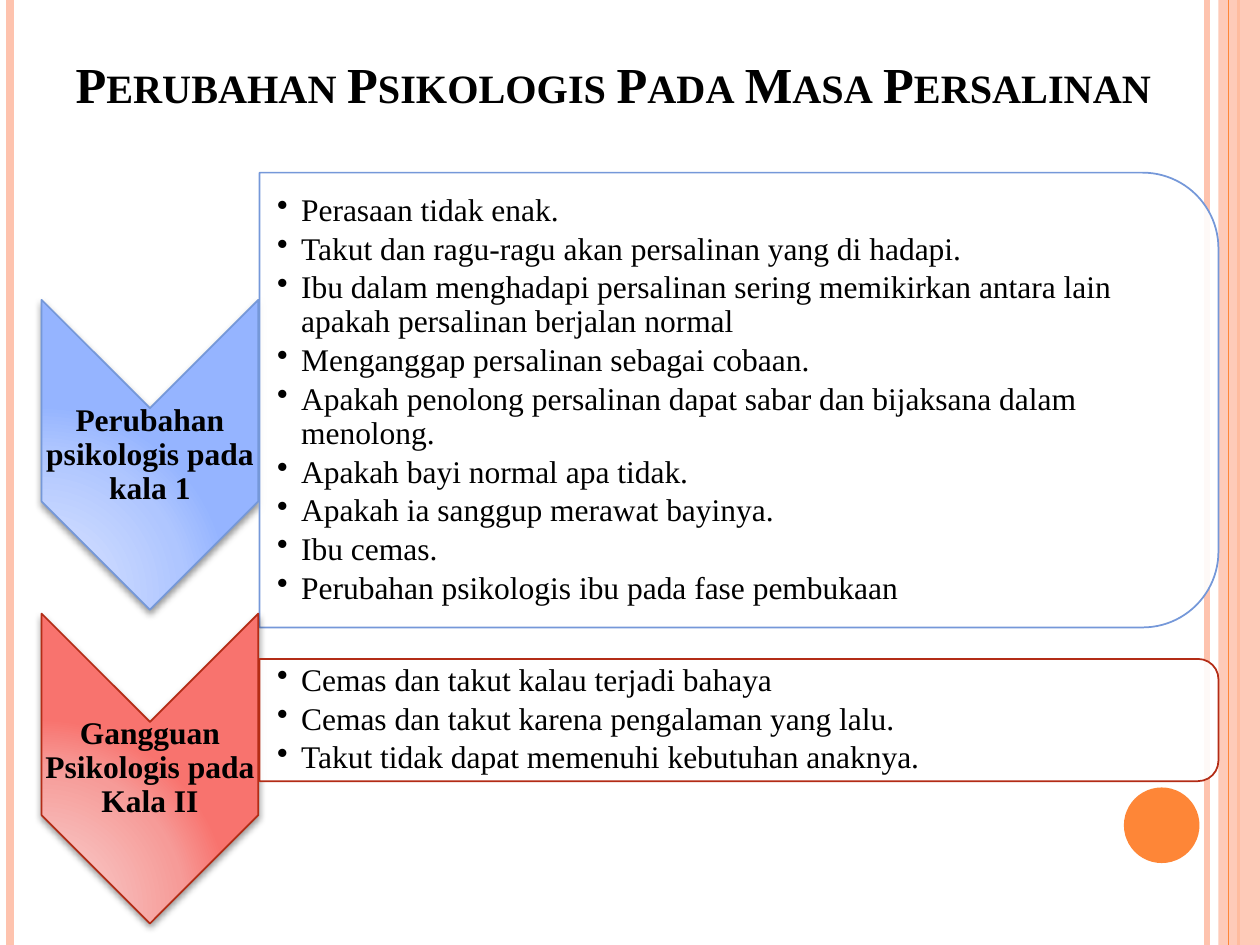
from lxml.etree import SubElement
from pptx import Presentation
from pptx.dml.color import RGBColor
from pptx.enum.shapes import MSO_CONNECTOR, MSO_SHAPE
from pptx.enum.text import MSO_ANCHOR, PP_ALIGN
from pptx.oxml import parse_xml
from pptx.oxml.ns import nsdecls, qn
from pptx.util import Inches, Pt

FONT = "Times New Roman"
TITLE = "Perubahan Psikologis Pada Masa Persalinan"
PINK, ORANGE = "FEC3AE", "FE8637"
RULES = [(9.58, PINK, 3), (0.08, PINK, 4.5), (9.83, ORANGE, 1.5)]
STEPS = [
    {
        "label": "Perubahan psikologis pada kala 1",
        "line": "7598D9",
        "stops": ["CFDCFF", "CBD9FF", "AFC6FF", "95B4FF"],
        "arrow": 2.38, "panel": 1.37, "high": 3.61, "wide": 7.43, "pad": 0.18,
        "points": [
            "Perasaan tidak enak.",
            "Takut dan ragu-ragu akan persalinan yang di hadapi.",
            "Ibu dalam menghadapi persalinan sering memikirkan antara lain  apakah persalinan berjalan normal",
            "Menganggap persalinan sebagai cobaan.",
            "Apakah penolong persalinan dapat sabar dan bijaksana dalam menolong.",
            "Apakah bayi normal apa tidak.",
            "Apakah ia sanggup merawat bayinya.",
            "Ibu cemas.",
            "Perubahan psikologis ibu pada fase pembukaan",
        ],
    },
    {
        "label": "Gangguan Psikologis pada Kala II",
        "line": "B32C16",
        "stops": ["F8C5C3", "F8BFBD", "F69B98", "F8736E"],
        "arrow": 4.87, "panel": 5.23, "high": 0.97, "wide": 7.56, "pad": 0.05,
        "points": [
            "Cemas dan takut kalau terjadi bahaya",
            "Cemas dan takut karena pengalaman yang lalu.",
            "Takut tidak dapat memenuhi kebutuhan anaknya.",
        ],
    },
]
LEFT, MID, WIDE = 0.33, 2.06, 7.61
ARROW_W, ARROW_H, LABEL_H = 1.72, 2.46, 0.74


def color(code):
    return RGBColor.from_string(code)


def fade(fill, part):
    tag = fill._xPr.find(qn("a:solidFill"))[0]
    SubElement(tag, qn("a:alpha")).set("val", str(part * 1000))


def rule(x, code, size):
    line = slide.shapes.add_connector(
        MSO_CONNECTOR.STRAIGHT, Inches(x), 0, Inches(x), deck.slide_height)
    line.line.color.rgb = color(code)
    line.line.width = Pt(size)
    SubElement(line._element.spPr, qn("a:effectLst"))


def shape(kind, x, y, w, h, code=None, line=None, turn=False):
    if turn:
        x, y, w, h = x + (w - h) / 2, y + (h - w) / 2, h, w
    item = slide.shapes.add_shape(kind, Inches(x), Inches(y), Inches(w), Inches(h))
    item.shadow.inherit = False
    item.rotation = 90 if turn else 0
    if code:
        item.fill.solid()
        item.fill.fore_color.rgb = color(code)
    if line:
        item.line.color.rgb = color(line)
        item.line.width = Pt(1)
    else:
        item.line.fill.background()
    return item


def glow(item, stops):
    marks = "".join(
        f'<a:gs pos="{at * 1000}"><a:srgbClr val="{code}"/></a:gs>'
        for at, code in zip((0, 30, 75, 100), stops))
    props = item._element.spPr
    props.find(qn("a:prstGeom")).addnext(parse_xml(
        f'<a:gradFill {nsdecls("a")} rotWithShape="0"><a:gsLst>{marks}</a:gsLst>'
        '<a:path path="circle"><a:fillToRect l="5000" t="100000" r="120000" b="10000"/>'
        '</a:path></a:gradFill>'))
    props.find(qn("a:effectLst")).append(parse_xml(
        f'<a:outerShdw {nsdecls("a")} blurRad="50800" dist="25400" dir="5400000" '
        'rotWithShape="0"><a:srgbClr val="000000"><a:alpha val="40000"/>'
        '</a:srgbClr></a:outerShdw>'))


def style(run, size, bold):
    run.font.name = FONT
    run.font.size = Pt(size)
    run.font.bold = bold
    run.font.color.rgb = color("000000")


def text(x, y, w, h, lines, bullet=False):
    frame = slide.shapes.add_textbox(
        Inches(x), Inches(y), Inches(w), Inches(h)).text_frame
    frame.word_wrap = True
    frame.vertical_anchor = MSO_ANCHOR.MIDDLE
    frame.margin_left = Inches(0.14 if bullet else 0.01)
    frame.margin_right = frame.margin_top = frame.margin_bottom = Inches(0.01)
    frame.text = "\n".join(lines)
    for para in frame.paragraphs:
        para.line_spacing = 0.9
        if bullet:
            para.space_after = Pt(2.7)
            props = para._p.get_or_add_pPr()
            props.set("marL", str(Inches(0.19)))
            props.set("indent", str(-Inches(0.19)))
            SubElement(props, qn("a:buChar")).set("char", "•")
        else:
            para.alignment = PP_ALIGN.CENTER
        style(para.runs[0], 18, not bullet)


deck = Presentation()
deck.slide_width, deck.slide_height = Inches(10), Inches(7.5)
slide = deck.slides.add_slide(deck.slide_layouts[5])

for x, code, size in RULES:
    rule(x, code, size)
band = shape(MSO_SHAPE.RECTANGLE, 9.67, 0, 0.33, 7.5, PINK)
fade(band.fill, 87)
rule(9.75, ORANGE, 0.75)
shape(MSO_SHAPE.OVAL, 8.92, 6.25, 0.6, 0.6, ORANGE)

title = slide.shapes.title
title.left, title.top = Inches(0.5), Inches(0.17)
title.width, title.height = Inches(9), Inches(0.78)
frame = title.text_frame
frame.text = TITLE
frame.vertical_anchor = MSO_ANCHOR.BOTTOM
frame.paragraphs[0].alignment = PP_ALIGN.LEFT
style(frame.paragraphs[0].runs[0], 28.8, True)
frame.paragraphs[0].runs[0].font._element.set("cap", "small")

for step in STEPS:
    top, high, pad = step["panel"], step["high"], step["pad"]
    arrow = shape(MSO_SHAPE.CHEVRON, LEFT, step["arrow"], ARROW_W, ARROW_H,
                  line=step["line"], turn=True)
    glow(arrow, step["stops"])
    text(LEFT, step["arrow"] + (ARROW_H - LABEL_H) / 2, ARROW_W, LABEL_H,
         [step["label"]])
    panel = shape(MSO_SHAPE.ROUND_2_SAME_RECTANGLE, MID, top, WIDE, high,
                  "FFFFFF", step["line"], True)
    fade(panel.fill, 90)
    text(MID, top + pad, step["wide"], high - 2 * pad, step["points"], True)

deck.save("out.pptx")
